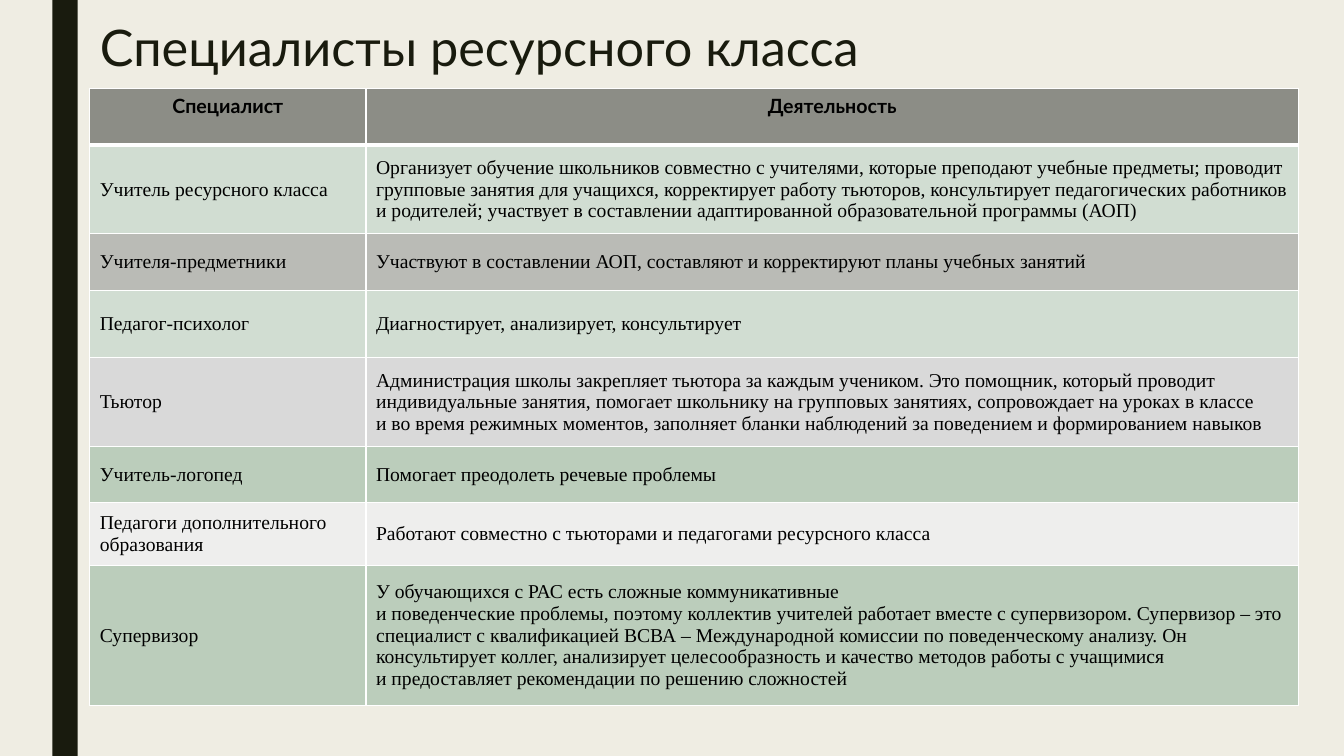
from lxml import etree
from pptx import Presentation
from pptx.dml.color import RGBColor
from pptx.enum.shapes import MSO_SHAPE
from pptx.enum.text import MSO_ANCHOR, MSO_AUTO_SIZE, PP_ALIGN
from pptx.oxml.ns import qn
from pptx.util import Inches, Pt

RECTANGLE = MSO_SHAPE.RECTANGLE
TOP, MIDDLE = MSO_ANCHOR.TOP, MSO_ANCHOR.MIDDLE
LEFT, CENTER = PP_ALIGN.LEFT, PP_ALIGN.CENTER
NO_FIT = MSO_AUTO_SIZE.NONE
TITLE_ONLY = 5

BACKGROUND, DARK, BLACK, WHITE = "EFEDE3", "191B0E", "000000", "FFFFFF"
GREY, PALE_GREEN, WARM_GREY = "8C8D86", "D1DDD2", "BABBB6"
LIGHT_GREY, GREEN, PALE_GREY = "D9D9D9", "BBCDBB", "EEEEED"

COLUMN_WIDTHS = [2.74, 9.25]
HEADER = ("Специалист", "Деятельность")

# Row height, fill, specialist, activity; \v is a line break
SPECIALISTS = [
    (0.88, PALE_GREEN, "Учитель ресурсного класса",
     "Организует обучение школьников совместно с учителями, которые преподают "
     "учебные предметы; проводит групповые занятия для учащихся, корректирует "
     "работу тьюторов, консультирует педагогических работников и родителей; "
     "участвует в составлении адаптированной образовательной программы (АОП)"),
    (0.56, WARM_GREY, "Учителя-предметники",
     "Участвуют в составлении АОП, составляют и корректируют планы учебных занятий"),
    (0.67, PALE_GREEN, "Педагог-психолог",
     "Диагностирует, анализирует, консультирует"),
    (0.88, LIGHT_GREY, "Тьютор",
     "Администрация школы закрепляет тьютора за каждым учеником. Это помощник, "
     "который проводит индивидуальные занятия, помогает школьнику на групповых "
     "занятиях, сопровождает на уроках в классе \vи во время режимных моментов, "
     "заполняет бланки наблюдений за поведением и формированием навыков"),
    (0.56, GREEN, "Учитель-логопед", "Помогает преодолеть речевые проблемы"),
    (0.62, PALE_GREY, "Педагоги дополнительного образования",
     "Работают совместно с тьюторами и педагогами ресурсного класса"),
    (1.39, GREEN, "Супервизор",
     "У обучающихся с РАС есть сложные коммуникативные \vи поведенческие проблемы, "
     "поэтому коллектив учителей работает вместе с супервизором. Супервизор – это "
     "специалист с квалификацией ВСВА – Международной комиссии по поведенческому "
     "анализу. Он консультирует коллег, анализирует целесообразность и качество "
     "методов работы с учащимися \vи предоставляет рекомендации по решению сложностей"),
]


def color(value):
    return RGBColor.from_string(value)


class SlideBuilder:
    title_font = {"name": "Lato", "size": Pt(36), "bold": False}
    header_font = {"name": "Lato", "size": Pt(14), "bold": True}
    body_font = {"name": "Times New Roman", "size": Pt(14), "bold": False}

    def __init__(self, page):
        self.page = page
        page.background.fill.solid()
        page.background.fill.fore_color.rgb = color(BACKGROUND)

    def set_text(self, frame, text, font, ink, alignment):
        frame.text = text
        for para in frame.paragraphs:
            para.alignment = alignment
            for span in para.runs:
                for name, value in font.items():
                    setattr(span.font, name, value)
                span.font.color.rgb = color(ink)

    def bar(self, left, top, width, height, fill):
        box = self.page.shapes.add_shape(
            RECTANGLE, Inches(left), Inches(top), Inches(width), Inches(height))
        box.shadow.inherit = False
        box.fill.solid()
        box.fill.fore_color.rgb = color(fill)
        box.line.fill.background()

    def title(self, left, top, width, height, text):
        box = self.page.shapes.title
        place = {"left": left, "top": top, "width": width, "height": height}
        for name, value in place.items():
            setattr(box, name, Inches(value))
        frame = box.text_frame
        self.set_text(frame, text, self.title_font, DARK, LEFT)
        layout = {"auto_size": NO_FIT, "vertical_anchor": TOP, "word_wrap": True}
        for name, value in layout.items():
            setattr(frame, name, value)
        frame.paragraphs[0].line_spacing = 0.89

    def borders(self, cell, widths):
        properties = cell._tc.get_or_add_tcPr()
        for position, (side, width) in enumerate(widths.items()):
            line = etree.Element(qn(f"a:ln{side}"), w=str(Pt(width)))
            fill = etree.SubElement(line, qn("a:solidFill"))
            etree.SubElement(fill, qn("a:srgbClr"), val=WHITE)
            properties.insert(position, line)

    def table(self, left, top, rows):
        heights = [row[0] for row in rows]
        table = self.page.shapes.add_table(
            len(rows), len(COLUMN_WIDTHS), Inches(left), Inches(top),
            Inches(sum(COLUMN_WIDTHS)), Inches(sum(heights))).table
        table.first_row = table.horz_banding = False
        for column, width in zip(table.columns, COLUMN_WIDTHS):
            column.width = Inches(width)
        for index, (height, fill, *texts) in enumerate(rows):
            table.rows[index].height = Inches(height)
            is_header = index == 0
            font = self.header_font if is_header else self.body_font
            # The rule under the header is shared by the first two rows
            widths = {"L": 1, "R": 1, "T": 3 if index == 1 else 1,
                      "B": 3 if is_header else 1}
            for cell, text in zip(table.rows[index].cells, texts):
                self.set_text(cell.text_frame, text, font, BLACK,
                              CENTER if is_header else LEFT)
                cell.vertical_anchor = TOP if is_header else MIDDLE
                cell.fill.solid()
                cell.fill.fore_color.rgb = color(fill)
                self.borders(cell, widths)


def main():
    deck = Presentation()
    deck.slide_width, deck.slide_height = Inches(13.33), Inches(7.5)
    builder = SlideBuilder(deck.slides.add_slide(deck.slide_layouts[TITLE_ONLY]))

    # Side bar and heading
    builder.bar(0.52, 0, 0.25, 7.5, DARK)
    builder.title(0.89, 0.18, 10.5, 0.7, "Специалисты ресурсного класса")

    # Specialists and what they do
    builder.table(0.89, 0.88, [(0.56, GREY, *HEADER), *SPECIALISTS])

    deck.save("out.pptx")


if __name__ == "__main__":
    main()
